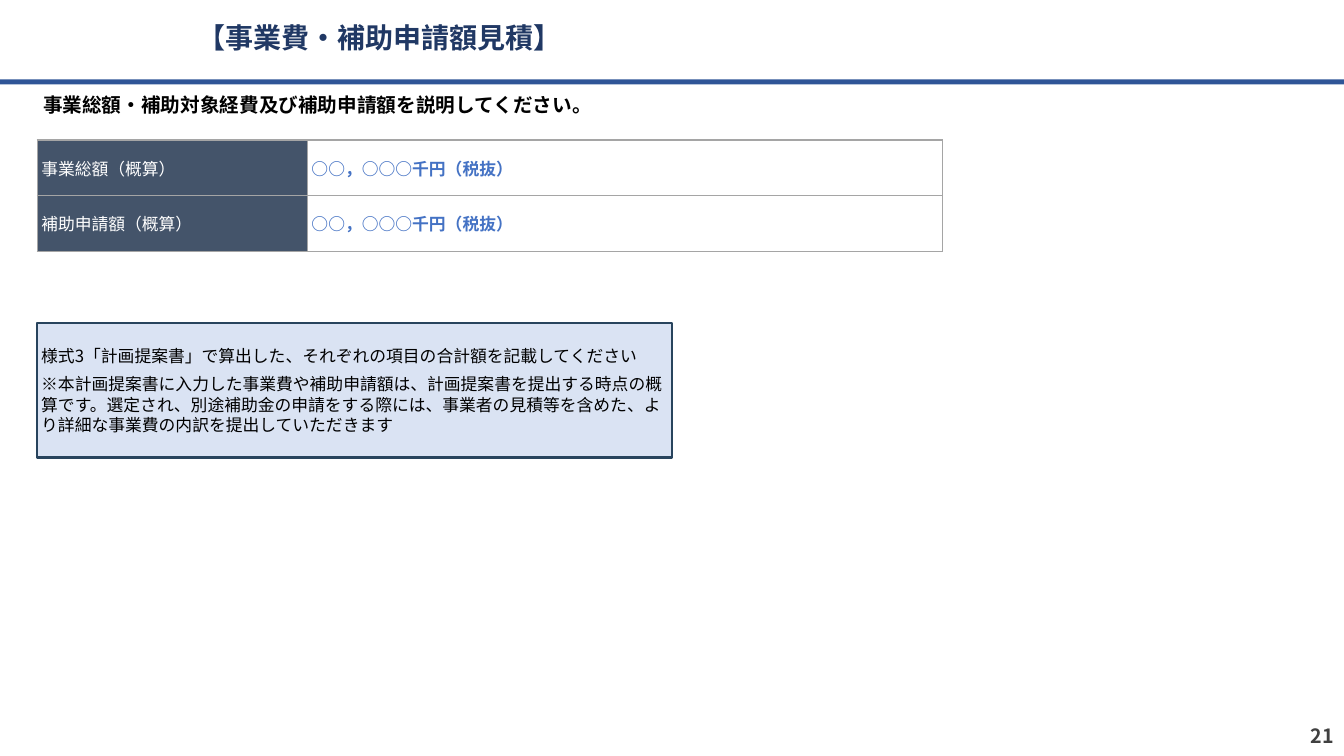
import pptx
import pptx.dml.color
import pptx.enum.shapes
import pptx.enum.text
import pptx.oxml
import pptx.oxml.ns
import pptx.util
from pptx.util import Cm

FONT = "Noto Sans CJK JP"
LEFT = Cm(0.94)
NAVY, BLUE, SLATE, GREY = "203864", "4472C4", "44546A", "A5A5A5"
ALIGN = pptx.enum.text.PP_ALIGN
SHAPE = pptx.enum.shapes.MSO_SHAPE


def rgb(value):
    return pptx.dml.color.RGBColor.from_string(value)


def write(frame, text, size=12, color="000000", bold=False, align=ALIGN.LEFT,
          spacing=None, gap=0):
    frame.word_wrap = True
    frame.vertical_anchor = pptx.enum.text.MSO_ANCHOR.MIDDLE
    for index, line in enumerate(text.split("\n")):
        paragraph = frame.add_paragraph() if index else frame.paragraphs[0]
        paragraph.alignment = align
        paragraph.space_before = pptx.util.Pt(gap if index else 0)
        if spacing:
            paragraph.line_spacing = spacing
        run = paragraph.add_run()
        run.text = line
        run.font.name = FONT
        run.font.size = pptx.util.Pt(size)
        run.font.bold = bold
        run.font.color.rgb = rgb(color)
        east_asian = pptx.oxml.parse_xml(
            f'<a:ea {pptx.oxml.ns.nsdecls("a")} typeface="{FONT}"/>')
        run.font._element.find(pptx.oxml.ns.qn("a:latin")).addnext(east_asian)


def set_margins(box):
    box.margin_left = box.margin_right = Cm(0.1)
    box.margin_top = box.margin_bottom = 0


def add_box(slide, kind, left, top, width, height, fill=None, line=None):
    box = slide.shapes.add_shape(kind, left, top, width, height)
    box.shadow.inherit = False
    if fill:
        box.fill.solid()
        box.fill.fore_color.rgb = rgb(fill)
    else:
        box.fill.background()
    if line:
        box.line.color.rgb = rgb(line)
        box.line.width = pptx.util.Pt(1.5)
    else:
        box.line.fill.background()
    set_margins(box.text_frame)
    return box


def add_title(slide, text):
    title = slide.shapes.title
    title.left, title.top, title.width, title.height = Cm(4.72), 0, Cm(26.8), Cm(2)
    title.text_frame.auto_size = pptx.enum.text.MSO_AUTO_SIZE.NONE
    write(title.text_frame, text, size=20, color=NAVY, bold=True, spacing=0.9)


def add_page_number(slide, number):
    box = slide.shapes.add_textbox(Cm(26.24), Cm(18.03), Cm(7.62), Cm(1.02))
    write(box.text_frame, number, size=14, color="404040", bold=True,
          align=ALIGN.RIGHT)


def set_borders(cell):
    properties = cell._tc.get_or_add_tcPr()
    for index, side in enumerate(("lnL", "lnR", "lnT", "lnB")):
        border = pptx.oxml.parse_xml(
            f'<a:{side} {pptx.oxml.ns.nsdecls("a")} w="12700"><a:solidFill>'
            f'<a:srgbClr val="{GREY}"/></a:solidFill></a:{side}>')
        properties.insert(index, border)


def add_amounts(slide, amounts):
    row_height = Cm(1.4)
    widths = Cm(6.81), Cm(16)
    table = slide.shapes.add_table(len(amounts), 2, LEFT, Cm(3.53), sum(widths),
                                   row_height * len(amounts)).table
    table.first_row = table.horz_banding = False
    for column, width in zip(table.columns, widths):
        column.width = width
    for row, (item, amount) in enumerate(amounts):
        item_cell, amount_cell = table.cell(row, 0), table.cell(row, 1)
        for cell, fill in ((item_cell, SLATE), (amount_cell, "FFFFFF")):
            set_margins(cell)
            cell.vertical_anchor = pptx.enum.text.MSO_ANCHOR.MIDDLE
            cell.fill.solid()
            cell.fill.fore_color.rgb = rgb(fill)
            set_borders(cell)
        write(item_cell.text_frame, item, color="FFFFFF")
        write(amount_cell.text_frame, amount, color=BLUE, bold=True)


def main():
    deck = pptx.Presentation()
    deck.slide_width, deck.slide_height = Cm(33.87), Cm(19.05)
    slide = deck.slides.add_slide(deck.slide_layouts[5])
    add_box(slide, SHAPE.RECTANGLE, 0, Cm(2), deck.slide_width, Cm(0.13),
            fill="2F5597")
    add_title(slide, "【事業費・補助申請額見積】")
    add_page_number(slide, "21")
    request = add_box(slide, SHAPE.ROUNDED_RECTANGLE, LEFT, Cm(2.13), Cm(32), Cm(1))
    write(request.text_frame, "事業総額・補助対象経費及び補助申請額を説明してください。",
          size=14, bold=True)
    add_amounts(slide, [("事業総額（概算）", "○○，○○○千円（税抜）"),
                        ("補助申請額（概算）", "○○，○○○千円（税抜）")])
    note = add_box(slide, SHAPE.RECTANGLE, LEFT, Cm(8.13), Cm(16), Cm(3.4),
                   fill="DAE3F3", line="28445D")
    write(note.text_frame,
          "様式3「計画提案書」で算出した、それぞれの項目の合計額を記載してください\n"
          "※本計画提案書に入力した事業費や補助申請額は、計画提案書を提出する時点の概算です。"
          "選定され、別途補助金の申請をする際には、事業者の見積等を含めた、"
          "より詳細な事業費の内訳を提出していただきます",
          spacing=pptx.util.Pt(14.6), gap=6)
    deck.save("out.pptx")


if __name__ == "__main__":
    main()
